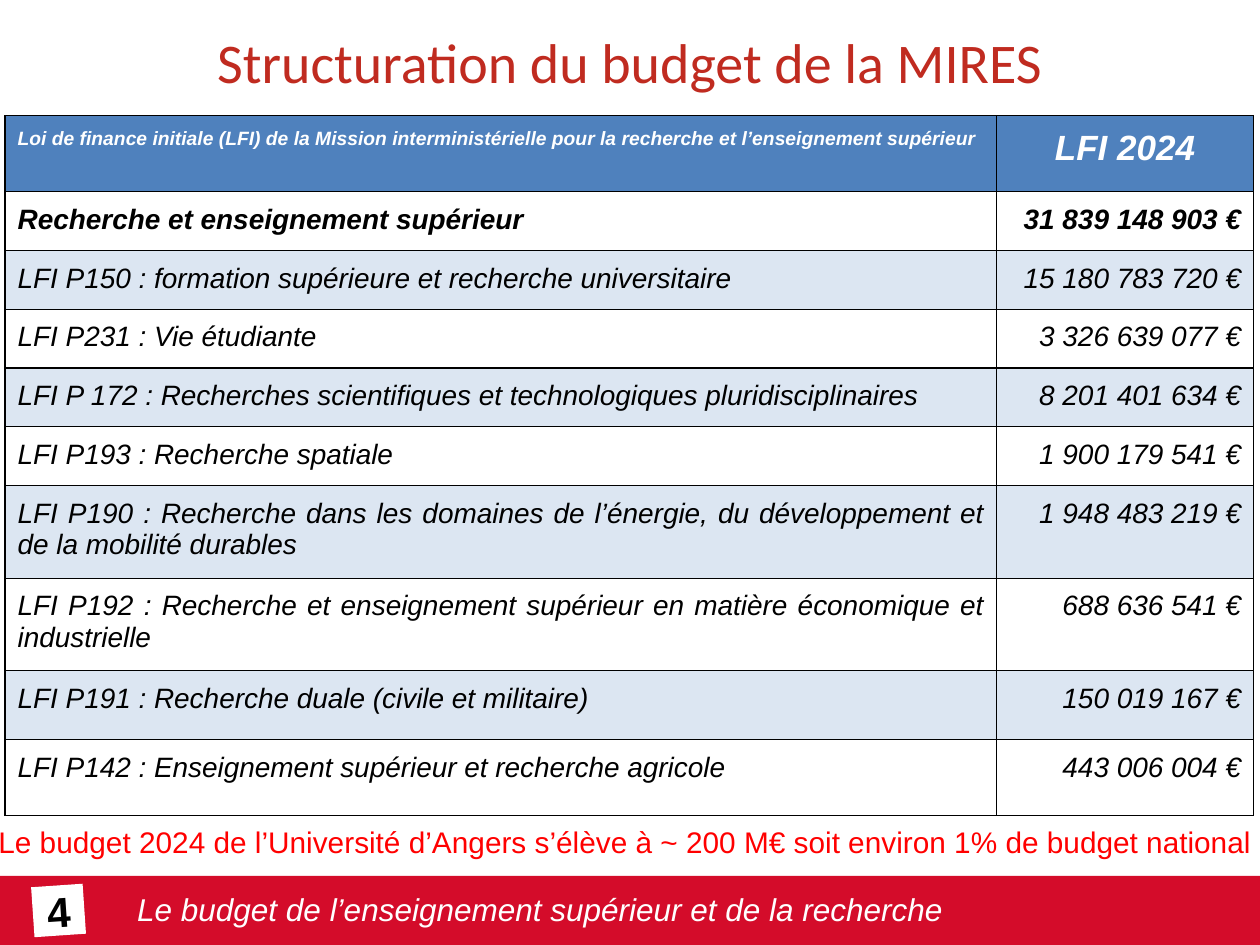
from typing import NamedTuple

from lxml.etree import SubElement
from pptx import Presentation
from pptx.dml.color import RGBColor
from pptx.enum.shapes import MSO_SHAPE
from pptx.enum.text import MSO_ANCHOR, PP_ALIGN
from pptx.oxml import parse_xml
from pptx.oxml.ns import nsdecls, qn
from pptx.util import Inches, Pt

WHITE = RGBColor(0xFF, 0xFF, 0xFF)
BLACK = RGBColor(0, 0, 0)
RED = RGBColor(0xFF, 0, 0)
BRICK = RGBColor(0xC0, 0x2B, 0x20)
CRIMSON = RGBColor(0xD4, 0x0C, 0x2A)
BLUE = RGBColor(0x4F, 0x81, 0xBD)
PALE = RGBColor(0xDC, 0xE6, 0xF2)

WIDTH, HEIGHT = Inches(10), Inches(7.5)
COLS = (7.87, 2.04)


class Style(NamedTuple):
    size: float
    color: RGBColor
    bold: bool = False
    italic: bool = False
    face: str = "Arial"


class Line(NamedTuple):
    label: str
    amount: str
    height: float


HEAD = Line("Loi de finance initiale (LFI) de la Mission interministérielle "
            "pour la recherche et l’enseignement supérieur", "LFI 2024", 0.6)
LINES = (
    Line("Recherche et enseignement supérieur", "31 839 148 903 €", 0.42),
    Line("LFI P150 : formation supérieure et recherche universitaire",
         "15 180 783 720 €", 0.43),
    Line("LFI P231 : Vie étudiante", "3 326 639 077 €", 0.42),
    Line("LFI P 172 : Recherches scientifiques et technologiques "
         "pluridisciplinaires", "8 201 401 634 €", 0.4),
    Line("LFI P193 : Recherche spatiale", "1 900 179 541 €", 0.42),
    Line("LFI P190 : Recherche dans les domaines de l’énergie, du "
         "développement et de la mobilité durables", "1 948 483 219 €", 0.52),
    Line("LFI P192 : Recherche et enseignement supérieur en matière "
         "économique et industrielle", "688 636 541 €", 0.51),
    Line("LFI P191 : Recherche duale (civile et militaire)",
         "150 019 167 €", 0.55),
    Line("LFI P142 : Enseignement supérieur et recherche agricole",
         "443 006 004 €", 0.6),
)


def write(frame, text: str, style: Style, align=PP_ALIGN.LEFT):
    para = frame.paragraphs[0]
    para.alignment = align
    run = para.add_run()
    run.text = text
    font = run.font
    font.size, font.name = Pt(style.size), style.face
    font.bold, font.italic = style.bold, style.italic
    font.color.rgb = style.color
    return run


def place(shape, left: float, top: float, wide: float, high: float) -> None:
    """Set a frame in shares of the slide's size."""
    shape.left, shape.width = int(WIDTH * left), int(WIDTH * wide)
    shape.top, shape.height = int(HEIGHT * top), int(HEIGHT * high)


def block(slide, box: tuple, fill: RGBColor):
    shape = slide.shapes.add_shape(MSO_SHAPE.RECTANGLE, 0, 0, 0, 0)
    place(shape, *box)
    shape.shadow.inherit = False
    shape.fill.solid()
    shape.fill.fore_color.rgb = fill
    shape.line.fill.background()
    return shape


def label(slide, box: tuple):
    shape = slide.shapes.add_textbox(0, 0, 0, 0)
    place(shape, *box)
    shape.text_frame.word_wrap = True
    return shape.text_frame


def border(cell) -> None:
    props = cell._tc.get_or_add_tcPr()
    for spot, side in enumerate(("lnL", "lnR", "lnT", "lnB")):
        edge = parse_xml(f'<a:{side} {nsdecls("a")} w="9525"/>')
        ink = SubElement(edge, qn("a:solidFill"))
        SubElement(ink, qn("a:srgbClr"), val=str(BLACK))
        props.insert(spot, edge)


def fill_cell(cell, text: str, style: Style, align, fill) -> None:
    cell.margin_left = cell.margin_right = Inches(0.1)
    cell.margin_top = cell.margin_bottom = Inches(0.1)
    if fill is None:
        cell.fill.background()
    else:
        cell.fill.solid()
        cell.fill.fore_color.rgb = fill
    border(cell)
    write(cell.text_frame, text, style, align)


def budget(slide) -> None:
    rows = (HEAD, *LINES)
    high = sum(row.height for row in rows)
    table = slide.shapes.add_table(
        len(rows), len(COLS), Inches(0.04), Inches(0.92),
        Inches(sum(COLS)), Inches(high)).table
    for col, wide in zip(table.columns, COLS):
        col.width = Inches(wide)
    for num, row in enumerate(rows):
        table.rows[num].height = Inches(row.height)
        if num == 0:
            sizes, color, fill, end = (11, 20), WHITE, BLUE, PP_ALIGN.CENTER
        else:
            sizes, color, end = (16, 16), BLACK, PP_ALIGN.RIGHT
            fill = PALE if num % 2 == 0 else None
        parts = zip((row.label, row.amount), sizes, (PP_ALIGN.JUSTIFY, end))
        for col, (text, size, align) in enumerate(parts):
            style = Style(size, color, bold=num < 2, italic=True)
            fill_cell(table.cell(num, col), text, style, align, fill)


def shade(run) -> None:
    """Give a run a soft drop shadow."""
    effect = parse_xml(
        f'<a:effectLst {nsdecls("a")}><a:outerShdw blurRad="38100" '
        'dist="38100" dir="2700000"><a:srgbClr val="000000">'
        '<a:alpha val="43000"/></a:srgbClr></a:outerShdw></a:effectLst>')
    run.font._element.find(qn("a:solidFill")).addnext(effect)


def main() -> None:
    deck = Presentation()
    deck.slide_width, deck.slide_height = WIDTH, HEIGHT
    slide = deck.slides.add_slide(deck.slide_layouts[5])

    # Footer band
    block(slide, (0, 0.927, 1, 0.073), CRIMSON)
    foot = label(slide, (0.099, 0.935, 0.728, 0.053))
    shade(write(foot, "Le budget de l’enseignement supérieur et de la recherche",
                Style(18, WHITE, italic=True)))

    # Title
    title = slide.shapes.title
    place(title, 0, 0, 1, 0.13)
    title.text_frame.vertical_anchor = MSO_ANCHOR.MIDDLE
    write(title.text_frame, "Structuration du budget de la MIRES",
          Style(32, BRICK, face="Calibri"), PP_ALIGN.CENTER)

    # Tilted page number
    badge = block(slide, (0.026, 0.937, 0.041, 0.053), WHITE)
    badge.rotation = 356.1
    frame = badge.text_frame
    frame.margin_left = frame.margin_right = 0
    frame.margin_top = frame.margin_bottom = 0
    frame.word_wrap = False
    frame.vertical_anchor = MSO_ANCHOR.MIDDLE
    write(frame, "4", Style(24, BLACK, bold=True), PP_ALIGN.CENTER)

    # Budget table and closing remark
    budget(slide)
    note = label(slide, (-0.012, 0.865, 1.024, 0.052))
    note.margin_left, note.margin_right = 0, Inches(0.18)
    write(note, "Le budget 2024 de l’Université d’Angers s’élève à ~ 200 M€ "
          "soit environ 1% de budget national", Style(17, RED), PP_ALIGN.RIGHT)

    deck.save("out.pptx")


if __name__ == "__main__":
    main()
